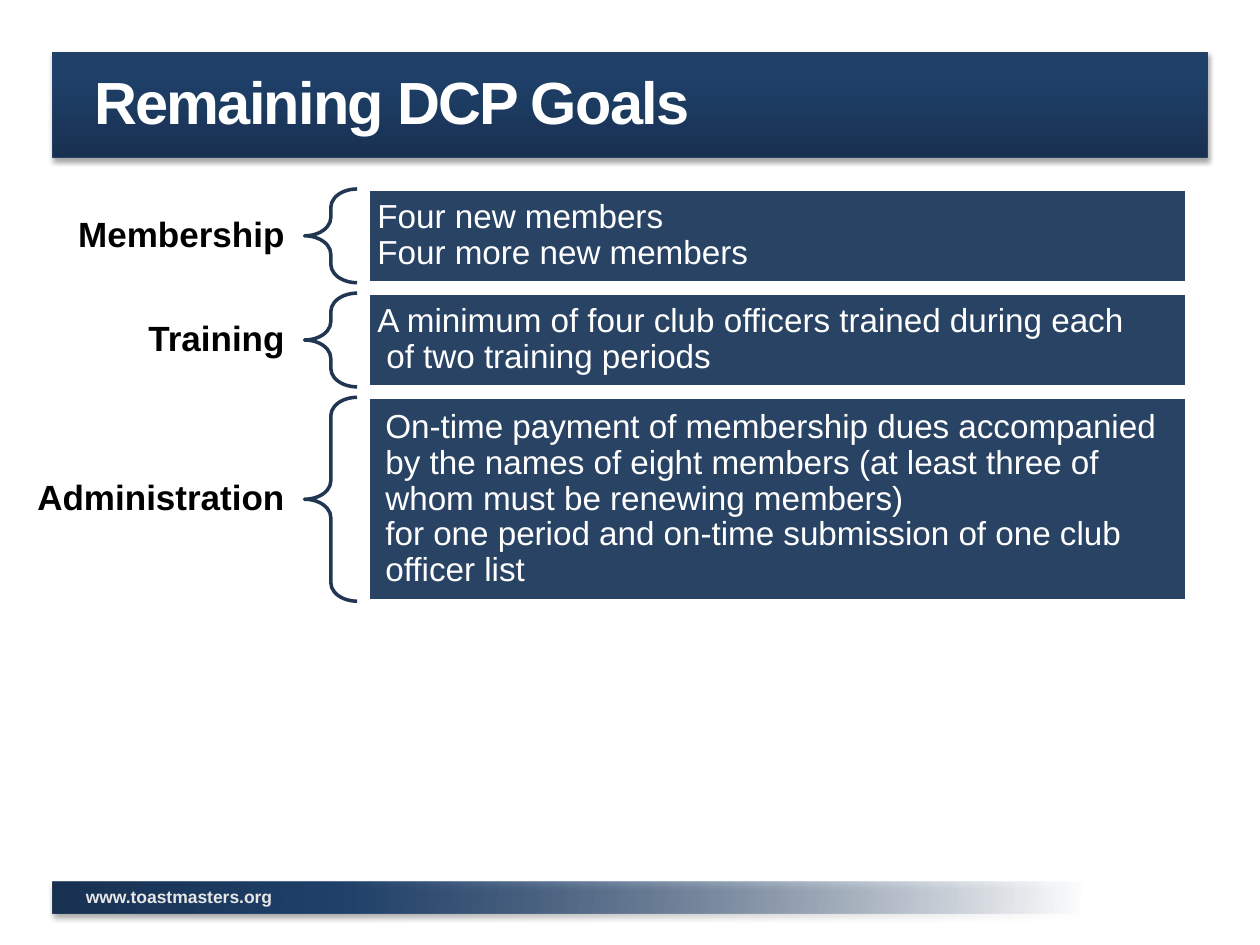
from lxml.etree import SubElement
from pptx import Presentation
from pptx.dml.color import RGBColor
from pptx.enum.shapes import MSO_SHAPE as Shape
from pptx.enum.text import MSO_ANCHOR as Anchor, PP_ALIGN as Align
from pptx.oxml.ns import qn
from pptx.util import Cm, Pt

COLORS = {
    "dark": "183151", "navy": "1F4069", "light": "1E406B", "edge": "274163",
    "brace": "213650", "panel": "294364", "white": "FFFFFF", "black": "000000",
    "address": "E6E6E6",
}
GOALS = [
    ("Membership", 5.28, 1.89, "Four new members\vFour more new members", 0, 0),
    ("Training", 5.28, 1.89,
     "A minimum of four club officers trained during each\vof two training periods", 0.18, -0.18),
    ("Administration", 5.93, 4.11,
     "On-time payment of membership dues accompanied by the names of eight members "
     "(at least three of whom must be renewing members)\v"
     "for one period and on-time submission of one club officer list", 0.16, 0),
]


def rgb(name):
    """Return the palette colour with this name."""
    return RGBColor.from_string(COLORS[name])


def write(box, text, size, color, bold=False, align=Align.LEFT, anchor=Anchor.MIDDLE,
          insets=(0.25, 0.13), wrap=True, spacing=None, margin=0, indent=0, tracking=None):
    """Fill a shape with one formatted paragraph."""
    frame = box.text_frame
    frame.word_wrap = wrap
    frame.vertical_anchor = anchor
    frame.margin_left = frame.margin_right = Cm(insets[0])
    frame.margin_top = frame.margin_bottom = Cm(insets[1])
    para = frame.paragraphs[0]
    para.text = text
    para.alignment = align
    if spacing:
        para.line_spacing = spacing
    if margin:
        props = para._p.get_or_add_pPr()
        props.set("marL", str(Cm(margin)))
        props.set("indent", str(Cm(indent)))
    for span in para.runs:
        span.font.name = "Arial"
        span.font.size = Pt(size)
        span.font.bold = bold
        span.font.color.rgb = rgb(color)
        if tracking:
            span._r.get_or_add_rPr().set("spc", str(tracking))


def add_bar(page, left, top, width, height, stops, angle, edge=None):
    """Add a gradient bar with a soft shadow beneath it."""
    bar = page.shapes.add_shape(Shape.RECTANGLE, Cm(left), Cm(top), Cm(width), Cm(height))
    bar.fill.gradient()
    bar.fill.gradient_angle = angle
    props = bar.element.spPr
    stop_list = props.find(qn("a:gradFill")).find(qn("a:gsLst"))
    for old in list(stop_list):
        stop_list.remove(old)
    for position, color, opacity in stops:
        stop = SubElement(stop_list, qn("a:gs"), pos=str(position * 1000))
        tint = SubElement(stop, qn("a:srgbClr"), val=COLORS[color])
        if opacity < 100:
            SubElement(tint, qn("a:alpha"), val=str(opacity * 1000))
    if edge:
        bar.line.color.rgb = rgb(edge)
        bar.line.width = Pt(0.75)
    else:
        bar.line.fill.background()
    bar.shadow.inherit = False
    shadow = SubElement(props.find(qn("a:effectLst")), qn("a:outerShdw"),
                        blurRad=str(Pt(3.1)), dist=str(Pt(1.8)), dir="5400000", rotWithShape="0")
    tint = SubElement(shadow, qn("a:srgbClr"), val=COLORS["black"])
    SubElement(tint, qn("a:alpha"), val="35000")


def add_header(page, left, top, width, height):
    """Place the title on its gradient bar."""
    add_bar(page, left, top, width, height,
            [(0, "dark", 100), (80, "navy", 100), (100, "light", 100)], 90, "edge")
    title = page.shapes.title
    title.left, title.top = Cm(left + 0.59), Cm(top + 0.13)
    title.width, title.height = Cm(20.75), Cm(1.7)
    write(title, "Remaining DCP Goals", 34, "white", bold=True, tracking=-100)
    title.element.getparent().append(title.element)


def add_footer(page, left, top, width, height):
    """Place the web address on a bar that fades out to the right."""
    add_bar(page, left, top, width, height,
            [(0, "dark", 100), (26, "navy", 100), (96, "light", 0)], 355)
    box = page.shapes.add_textbox(Cm(left + 0.42), Cm(top - 0.05), Cm(4.32), Cm(0.68))
    write(box, "www.toastmasters.org", 10, "address", bold=True, anchor=Anchor.TOP, wrap=False)


def add_goal(page, left, top, width, height, label, label_width, text, margin, indent):
    """Place a label left of the box, then a brace and a filled panel within it."""
    label_height, brace_width, panel_offset = 1.1, 1.06, 1.28
    name = page.shapes.add_textbox(Cm(left - label_width), Cm(top + (height - label_height) / 2),
                                   Cm(label_width), Cm(label_height))
    write(name, label, 20, "black", bold=True, align=Align.RIGHT, insets=(0.4, 0.14), spacing=0.9)

    brace = page.shapes.add_shape(Shape.LEFT_BRACE, Cm(left), Cm(top), Cm(brace_width), Cm(height))
    brace.adjustments[0] = 0.35
    brace.fill.background()
    brace.line.color.rgb = rgb("brace")

    panel = page.shapes.add_shape(Shape.RECTANGLE, Cm(left + panel_offset), Cm(top),
                                  Cm(width - panel_offset), Cm(height))
    panel.fill.solid()
    panel.fill.fore_color.rgb = rgb("panel")
    panel.line.color.rgb = rgb("white")
    for shape in (brace, panel):
        shape.line.width = Pt(2)
        shape.shadow.inherit = False
    write(panel, text, 19, "white", insets=(0.19, 0.19), spacing=0.9, margin=margin, indent=indent)


def add_goals(page, left, top, width, gap):
    """Stack the goal rows with equal gaps."""
    for label, label_width, height, text, margin, indent in GOALS:
        add_goal(page, left, top, width, height, label, label_width, text, margin, indent)
        top += height + gap


def main():
    """Build and save the deck."""
    deck = Presentation()
    deck.slide_width, deck.slide_height = Cm(25.4), Cm(19.05)
    page = deck.slides.add_slide(deck.slide_layouts[5])
    add_header(page, 1.06, 1.06, 23.28, 2.12)
    add_footer(page, 1.06, 17.78, 21.59, 0.64)
    add_goals(page, 6.14, 3.81, 17.79, 0.21)
    deck.save("out.pptx")


if __name__ == "__main__":
    main()
